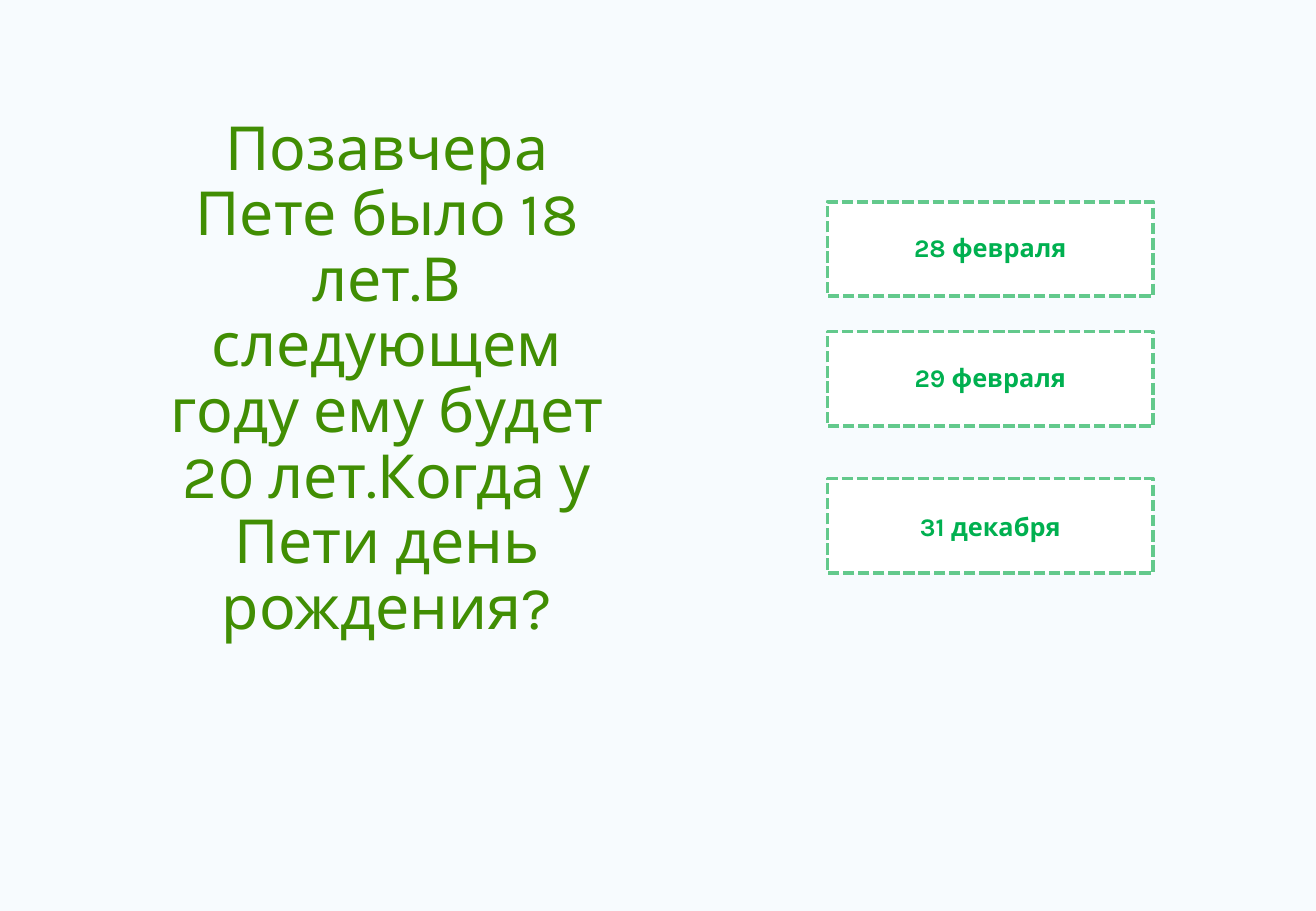
from dataclasses import dataclass

from lxml.etree import SubElement
from pptx import Presentation
from pptx.dml.color import RGBColor as RGB
from pptx.enum.dml import MSO_LINE_DASH_STYLE as Dash
from pptx.enum.shapes import MSO_SHAPE as Shape
from pptx.enum.text import MSO_ANCHOR as Anchor, PP_ALIGN as Align
from pptx.oxml import parse_xml
from pptx.oxml.ns import nsdecls, qn
from pptx.util import Inches, Pt


@dataclass(frozen=True)
class Theme:
    font: str = "Karla"
    background: RGB = RGB.from_string("F7FBFE")
    question: RGB = RGB.from_string("418E03")
    answer: RGB = RGB.from_string("00B050")
    border: RGB = RGB.from_string("63C98C")
    fill: RGB = RGB.from_string("FFFFFF")
    question_size: Pt = Pt(36)
    answer_size: Pt = Pt(15)
    border_width: Pt = Pt(2.25)


class QuizSlide:
    def __init__(self, prs, theme):
        self.theme = theme
        self.column = prs.slide_width / 100
        self.row = prs.slide_height / 100
        self.s = prs.slides.add_slide(prs.slide_layouts[6])
        bg = self.s.background.fill
        bg.solid()
        bg.fore_color.rgb = theme.background

    def place(self, left, top, width, height):
        return (round(left * self.column), round(top * self.row),
                round(width * self.column), round(height * self.row))

    def label(self, sp, text, color, spacing, **formats):
        tf = sp.text_frame
        tf.word_wrap = True
        tf.vertical_anchor = Anchor.MIDDLE
        p = tf.paragraphs[0]
        p.alignment = Align.CENTER
        p.line_spacing = spacing
        r = p.add_run()
        r.text = text
        for name, value in {"name": self.theme.font, **formats}.items():
            setattr(r.font, name, value)
        r.font.color.rgb = color
        return r

    def question(self, text, *box):
        sp = self.s.shapes.add_textbox(*self.place(*box))
        r = self.label(sp, text, self.theme.question, 0.9,
                       size=self.theme.question_size)
        effects = parse_xml(f"<a:effectLst {nsdecls('a')}/>")
        shadow = SubElement(effects, qn("a:outerShdw"), blurRad="38100",
                            dist="38100", dir="2700000", algn="tl")
        black = SubElement(shadow, qn("a:srgbClr"), val="000000")
        SubElement(black, qn("a:alpha"), val="43000")
        r._r.rPr.find(qn("a:solidFill")).addnext(effects)

    def answer(self, text, spacing, *box):
        sp = self.s.shapes.add_shape(Shape.RECTANGLE, *self.place(*box))
        sp.shadow.inherit = False
        sp.fill.solid()
        sp.fill.fore_color.rgb = self.theme.fill
        sp.line.color.rgb = self.theme.border
        for name, value in {"width": self.theme.border_width,
                            "dash_style": Dash.SQUARE_DOT}.items():
            setattr(sp.line, name, value)
        self.label(sp, text, self.theme.answer, spacing,
                   size=self.theme.answer_size, bold=True)


def main():
    prs = Presentation()
    prs.slide_width, prs.slide_height = Inches(10.83), Inches(7.5)
    quiz = QuizSlide(prs, Theme())
    quiz.question(
        "Позавчера Пете было 18 лет.В следующем году ему будет 20 лет."
        "Когда у Пети день рождения?", 10.71, 20.27, 37.4, 42.93)
    answers = (("28 февраля", 0.9, 22.13), ("31 декабря", 1.0, 52.53),
               ("29 февраля", 0.9, 36.4))
    for text, spacing, top in answers:
        quiz.answer(text, spacing, 62.88, top, 24.75, 10.4)
    prs.save("out.pptx")


if __name__ == "__main__":
    main()
